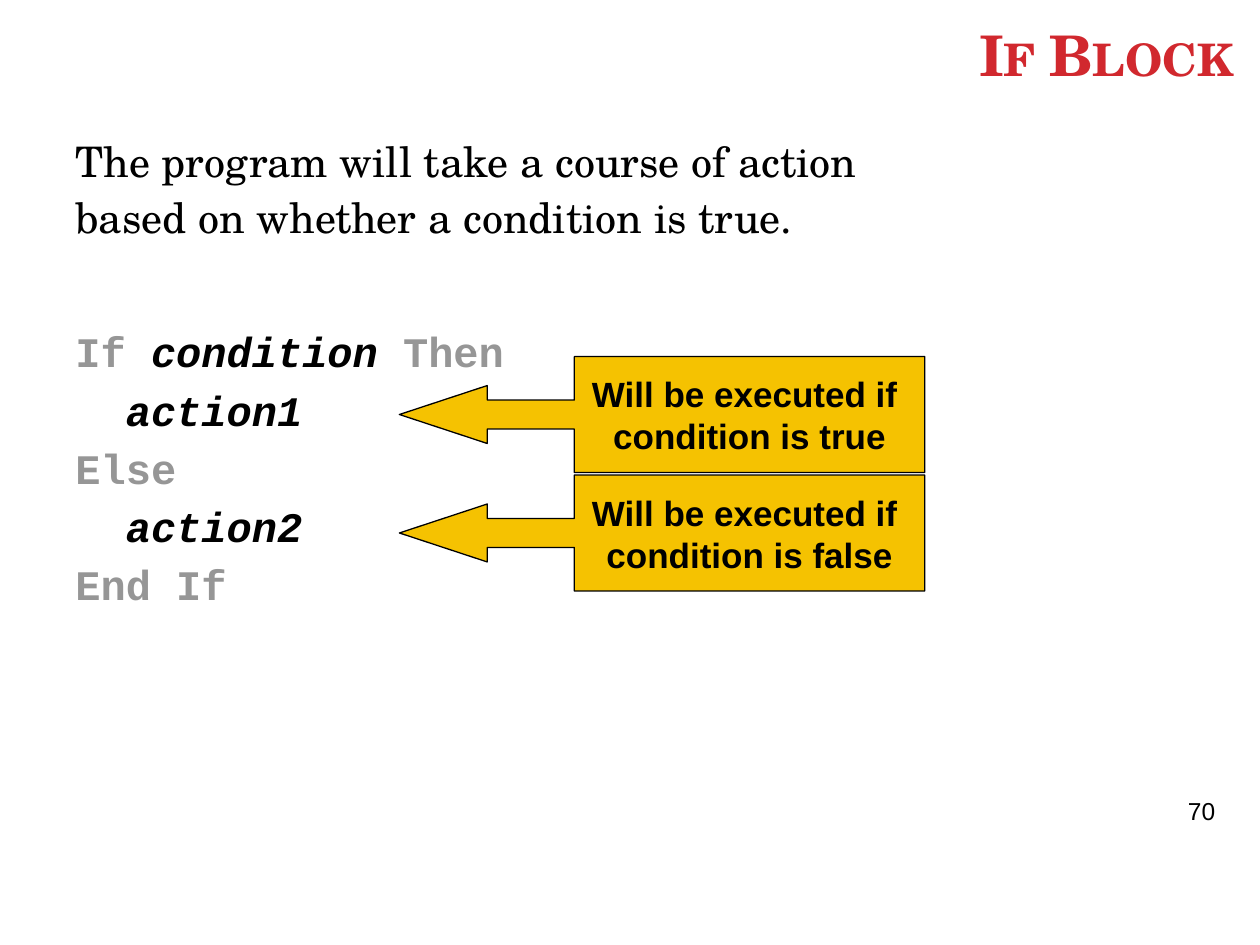
import pptx
import pptx.dml.color
import pptx.enum.shapes
import pptx.enum.text
import pptx.util

WIDTH, HEIGHT = 10, 7.5
COLORS = {"title": "D1282E", "text": "000000", "keyword": "969696", "callout": "F5C201"}
SERIF, SANS, MONO = "TeX Gyre Schola", "Arial", "Courier New"

TITLE = {"name": SERIF, "size": 32, "bold": True, "color": "title"}
PROSE = {"name": SERIF, "size": 24, "color": "text"}
KEYWORD = {"name": MONO, "size": 24, "bold": True, "italic": False, "color": "keyword"}
VARIABLE = {**KEYWORD, "italic": True, "color": "text"}
LABEL = {"name": SANS, "size": 20, "bold": True, "color": "text"}
PAGE_NUMBER = {"name": SANS, "size": 14, "color": "text"}

HANGING, NESTED = (0.3, -0.3), (0.4, 0)
# Each line: runs, (left margin, first-line indent), points before
BODY_LINES = [
    ([("The program will take a course of action", PROSE)], HANGING, 6),
    ([("based on whether a condition is true.", PROSE)], HANGING, 6),
    ([("If ", KEYWORD), ("condition ", VARIABLE), ("Then", KEYWORD)], HANGING, 51),
    ([("action1", VARIABLE)], NESTED, 7.4),
    ([("Else", KEYWORD)], HANGING, 7.4),
    ([("action2", VARIABLE)], NESTED, 7.4),
    ([("End If", KEYWORD)], HANGING, 7.4),
]
OUTCOMES = ["true", "false"]
CALLOUT_TOP, CALLOUT_PITCH = 2.83, 0.94
CALLOUT_ADJUSTMENTS = [0.25, 0.25, 0.758, 0.667]


def color_of(key):
    return pptx.dml.color.RGBColor.from_string(COLORS[key])


def inches(*lengths):
    return [pptx.util.Inches(length) for length in lengths]


def add_run(paragraph, text, style):
    run = paragraph.add_run()
    run.text = text
    for attribute, value in style.items():
        if attribute == "color":
            run.font.color.rgb = color_of(value)
        elif attribute == "size":
            run.font.size = pptx.util.Pt(value)
        else:
            setattr(run.font, attribute, value)
    return run


def paragraphs_for(frame, count):
    """Yield count paragraphs, the first being the one already in the frame."""
    for index in range(count):
        yield frame.add_paragraph() if index else frame.paragraphs[0]


def add_text_frame(slide, left, top, width, height):
    frame = slide.shapes.add_textbox(*inches(left, top, width, height)).text_frame
    frame.word_wrap = True
    return frame


def set_title(slide, text):
    title = slide.shapes.title
    title.left, title.top, title.width, title.height = inches(0.17, 0.14, 9.72, 0.61)
    frame = title.text_frame
    frame.auto_size = pptx.enum.text.MSO_AUTO_SIZE.NONE
    frame.vertical_anchor = pptx.enum.text.MSO_ANCHOR.BOTTOM
    heading = frame.paragraphs[0]
    heading.alignment = pptx.enum.text.PP_ALIGN.RIGHT
    run = add_run(heading, text, TITLE)
    run.font._element.set("cap", "small")


def add_body(slide):
    frame = add_text_frame(slide, 0.5, 1.07, 8.28, 6.01)
    lines = paragraphs_for(frame, len(BODY_LINES))
    for line, (runs, margins, space_before) in zip(lines, BODY_LINES):
        line.line_spacing = 0.9
        line.space_before = pptx.util.Pt(space_before)
        properties = line._p.get_or_add_pPr()
        for name, length in zip(("marL", "indent"), inches(*margins)):
            properties.set(name, str(length))
        for text, style in runs:
            add_run(line, text, style)


def add_callout(slide, top, outcome):
    callout = slide.shapes.add_shape(
        pptx.enum.shapes.MSO_SHAPE.LEFT_ARROW_CALLOUT, *inches(3.17, top, 4.17, 0.92))
    for index, value in enumerate(CALLOUT_ADJUSTMENTS):
        callout.adjustments[index] = value
    callout.shadow.inherit = False
    callout.fill.solid()
    callout.fill.fore_color.rgb = color_of("callout")
    callout.line.color.rgb = color_of("text")
    callout.line.width = pptx.util.Pt(0.75)
    frame = callout.text_frame
    frame.word_wrap = False
    frame.vertical_anchor = pptx.enum.text.MSO_ANCHOR.MIDDLE
    wording = ["Will be executed if ", f"condition is {outcome}"]
    for line, text in zip(paragraphs_for(frame, len(wording)), wording):
        line.alignment = pptx.enum.text.PP_ALIGN.CENTER
        add_run(line, text, LABEL)


def add_page_number(slide, number):
    frame = add_text_frame(slide, 9.33, 6.27, 0.67, 0.57)
    add_run(frame.paragraphs[0], number, PAGE_NUMBER)


def main():
    deck = pptx.Presentation()
    deck.slide_width, deck.slide_height = inches(WIDTH, HEIGHT)
    slide = deck.slides.add_slide(deck.slide_layouts.get_by_name("Title Only"))
    set_title(slide, "If Block")
    add_body(slide)
    add_page_number(slide, "70")
    for row, outcome in enumerate(OUTCOMES):
        add_callout(slide, CALLOUT_TOP + row * CALLOUT_PITCH, outcome)
    deck.save("out.pptx")


if __name__ == "__main__":
    main()
